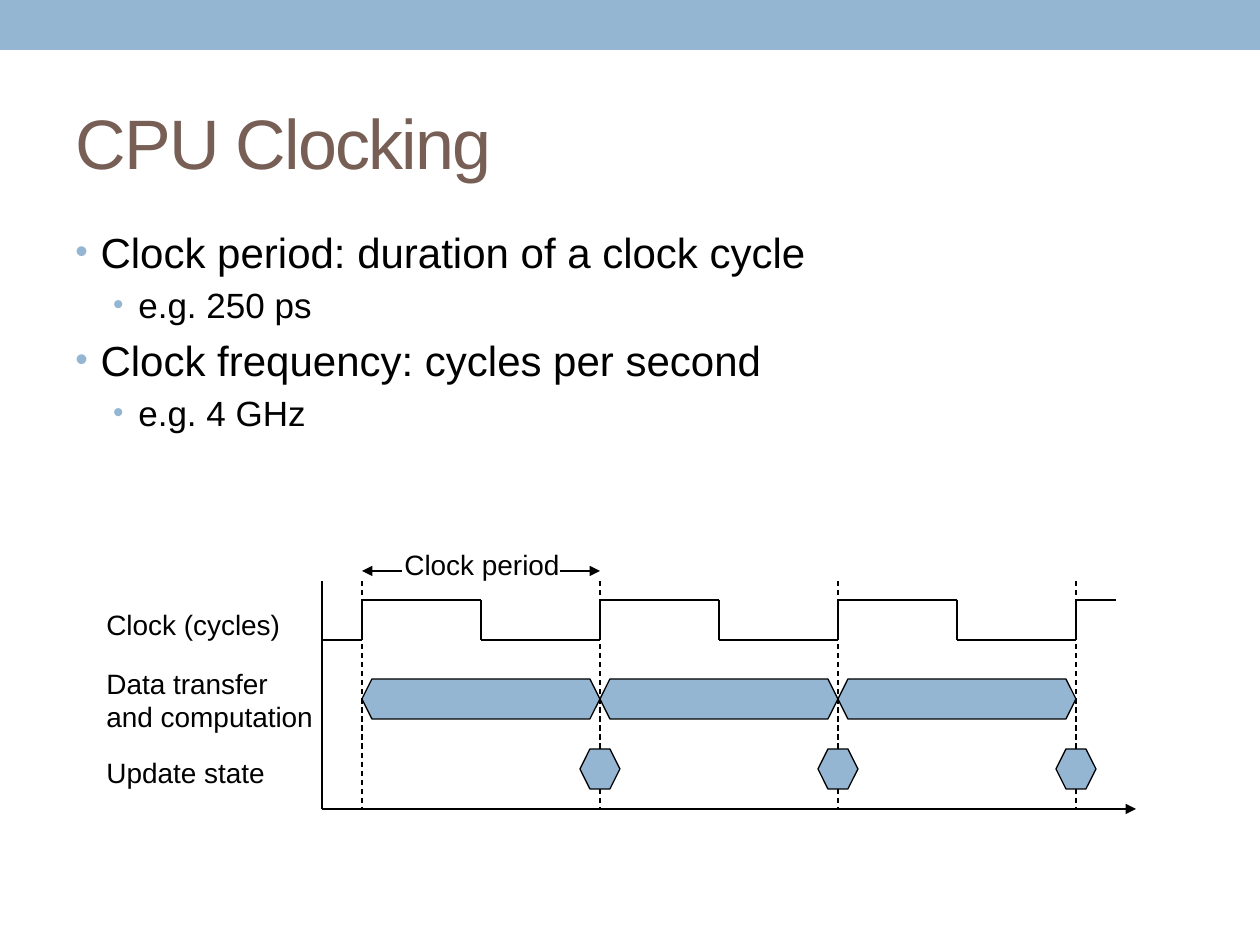
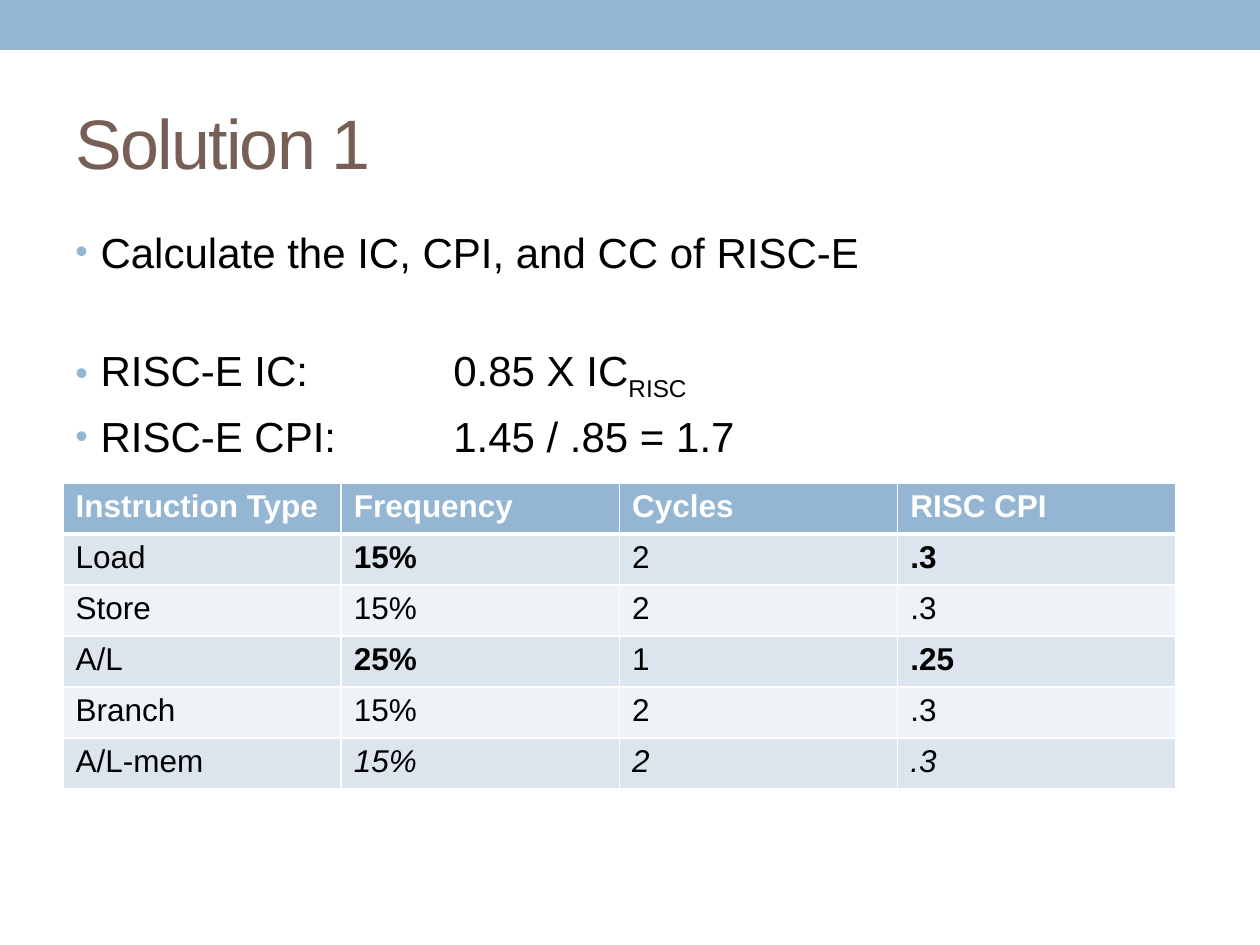
import itertools

import lxml.etree
import pptx
import pptx.dml.color
import pptx.enum.dml
import pptx.enum.shapes
import pptx.enum.text
import pptx.oxml.ns
import pptx.util

SCALE = 914400 / 126
BLUE, BROWN, BLACK, WHITE = "94B6D2", "775F55", "000000", "FFFFFF"
ROW_FILLS = ["DCE5EE", "EEF3F7"]
BAND_BOX = (0, 0, 1260, 50)
TITLE_BOX = (63, 73, 1134, 136)
BODY_BOX = (63, 220, 1134, 672)
ANCHOR = pptx.enum.text.MSO_ANCHOR
ALIGN = pptx.enum.text.PP_ALIGN
SHAPE = pptx.enum.shapes.MSO_SHAPE
LEVELS = [
    {"marL": 182880, "indent": -182880, "defTabSz": 914400, "size": 24},
    {"marL": 457200, "indent": -182880, "defTabSz": 914400, "size": 20},
]


def px(length):
    return pptx.util.Emu(round(length * SCALE))


def rgb(value):
    return pptx.dml.color.RGBColor.from_string(value)


def apply_format(target, values):
    for name, value in values.items():
        setattr(target, name, value)


def add_xml(parent, tag, **attributes):
    return lxml.etree.SubElement(parent, pptx.oxml.ns.qn(tag), attributes)


def format_font(run, size, color=BLACK, **values):
    apply_format(run.font, {"name": "Arial", "size": pptx.util.Pt(size), **values})
    run.font.color.rgb = rgb(color)


def paint(shape, fill, outlined=False):
    shape.shadow.inherit = False
    shape.fill.solid()
    shape.fill.fore_color.rgb = rgb(fill)
    if outlined:
        shape.line.color.rgb = rgb(BLACK)
        shape.line.width = pptx.util.Pt(0.75)
    else:
        shape.line.fill.background()


def add_rectangle(slide, box, fill):
    shape = slide.shapes.add_shape(SHAPE.RECTANGLE, *map(px, box))
    paint(shape, fill)


def add_line(slide, start, end, width=0.75, dashed=False, arrows=()):
    line = slide.shapes.add_connector(
        pptx.enum.shapes.MSO_CONNECTOR.STRAIGHT, *map(px, (*start, *end)))
    line.line.color.rgb = rgb(BLACK)
    line.line.width = pptx.util.Pt(width)
    if dashed:
        line.line.dash_style = pptx.enum.dml.MSO_LINE.DASH
    properties = line._element.spPr
    for arrow in arrows:
        add_xml(properties.find(pptx.oxml.ns.qn("a:ln")), arrow, type="triangle")
    add_xml(properties, "a:effectLst")


def add_text_frame(slide, box, **values):
    frame = slide.shapes.add_textbox(*map(px, box)).text_frame
    apply_format(frame, {"word_wrap": True, **values})
    return frame


def add_label(slide, box, text, alignment=ALIGN.LEFT):
    frame = add_text_frame(slide, box, word_wrap=False,
                           auto_size=pptx.enum.text.MSO_AUTO_SIZE.SHAPE_TO_FIT_TEXT)
    paragraph = frame.paragraphs[0]
    apply_format(paragraph, {"text": text, "alignment": alignment})
    for run in paragraph.runs:
        format_font(run, 16)


def add_hexagon(slide, left, top, width, height=40, notch=10):
    middle, right, bottom = top + height / 2, left + width, top + height
    builder = slide.shapes.build_freeform(left, middle, SCALE)
    builder.add_line_segments([
        (left + notch, top), (right - notch, top), (right, middle),
        (right - notch, bottom), (left + notch, bottom)], close=True)
    paint(builder.convert_to_shape(), BLUE, outlined=True)


def add_title(slide, box, text):
    frame = add_text_frame(slide, box, vertical_anchor=ANCHOR.MIDDLE)
    run = frame.paragraphs[0].add_run()
    run.text = text
    format_font(run, 40, BROWN)
    run._r.get_or_add_rPr().set("spc", "-100")


def add_bullets(slide, box, bullets):
    frame = add_text_frame(slide, box)
    for index, bullet in enumerate(bullets):
        paragraph = frame.add_paragraph() if index else frame.paragraphs[0]
        level = bullet.get("level", 0)
        style = LEVELS[level]
        paragraph.level = level
        properties = paragraph._p.get_or_add_pPr()
        for name in ("marL", "indent", "defTabSz"):
            properties.set(name, str(style[name]))
        if "gap" in bullet:
            paragraph.space_before = pptx.util.Pt(bullet["gap"])
        else:
            add_xml(add_xml(properties, "a:spcBef"), "a:spcPct", val="20000")
        add_xml(add_xml(properties, "a:buClr"), "a:srgbClr", val=BLUE)
        add_xml(properties, "a:buSzPct", val="85000")
        add_xml(properties, "a:buFont", typeface="Arial")
        add_xml(properties, "a:buChar", char="•")
        run = paragraph.add_run()
        run.text = bullet["text"]
        format_font(run, style["size"])
        if "subscript" in bullet:
            run = paragraph.add_run()
            run.text = bullet["subscript"]
            format_font(run, style["size"])
            run._r.get_or_add_rPr().set("baseline", "-25000")


def add_timing_diagram(slide, box):
    left, top, width, height = box
    period, lead, cycles = 238, 40, 3
    axis_left, axis_bottom = left + 228, top + height
    edges = [axis_left + lead + period * cycle for cycle in range(cycles + 1)]
    axis_top, high, low = top + 39, top + 58, top + 98
    bar_top, state_top = top + 137, top + 207

    add_line(slide, (edges[0], top + 29), (edges[1], top + 29),
             arrows=("a:headEnd", "a:tailEnd"))
    for edge in edges:
        add_line(slide, (edge, axis_top), (edge, axis_bottom), dashed=True)

    wave = [(axis_left, low)]
    for edge in edges:
        middle = edge + period / 2
        wave += [(edge, low), (edge, high), (middle, high), (middle, low)]
    wave = wave[:-2] + [(edges[-1] + lead, high)]
    for start, end in itertools.pairwise(wave):
        add_line(slide, start, end, width=1.5)

    for edge in edges[1:]:
        add_hexagon(slide, edge - 20, state_top, 40)
    add_line(slide, (axis_left, axis_bottom), (left + width, axis_bottom),
             arrows=("a:tailEnd",))
    add_line(slide, (axis_left, axis_bottom), (axis_left, axis_top))

    for offset, label_width, label_height, text in [
            (59, 199, 47, "Clock (cycles)"),
            (118, 232, 81, "Data transfer\nand computation"),
            (207, 184, 47, "Update state")]:
        add_label(slide, (left, top + offset, label_width, label_height), text)
    center = (edges[0] + edges[1]) / 2
    add_rectangle(slide, (center - 79, top + 19, 158, 20), WHITE)
    add_label(slide, (center - 89, top - 1, 180, 47), "Clock period", ALIGN.CENTER)
    for edge in edges[:-1]:
        add_hexagon(slide, edge, bar_top, period)


def add_cell_borders(cell, bottom_width):
    properties = cell._tc.get_or_add_tcPr()
    widths = {"a:lnL": 1, "a:lnR": 1, "a:lnT": 1, "a:lnB": bottom_width}
    for position, (tag, width) in enumerate(widths.items()):
        border = add_xml(properties, tag, w=str(pptx.util.Pt(width)))
        add_xml(add_xml(border, "a:solidFill"), "a:srgbClr", val=WHITE)
        properties.insert(position, border)


def add_cpi_table(slide, box, rows, bold_cells, italic_cells):
    left, top, width, height = box
    table = slide.shapes.add_table(
        len(rows), len(rows[0]), *map(px, box)).table
    table.horz_banding = False
    for column in table.columns:
        column.width = px(width / len(rows[0]))
    for row_index, values in enumerate(rows):
        table.rows[row_index].height = px(height / len(rows))
        header = row_index == 0
        fill = BLUE if header else ROW_FILLS[(row_index - 1) % 2]
        for column_index, value in enumerate(values):
            position = (row_index, column_index)
            cell = table.cell(*position)
            cell.fill.solid()
            cell.fill.fore_color.rgb = rgb(fill)
            add_cell_borders(cell, 3 if header else 1)
            run = cell.text_frame.paragraphs[0].add_run()
            run.text = value
            format_font(run, 18, WHITE if header else BLACK,
                        bold=header or position in bold_cells,
                        italic=position in italic_cells)


def add_content_slide(presentation, title, bullets):
    slide = presentation.slides.add_slide(presentation.slide_layouts[6])
    add_rectangle(slide, BAND_BOX, BLUE)
    add_title(slide, TITLE_BOX, title)
    add_bullets(slide, BODY_BOX, bullets)
    return slide


def build_clocking_slide(presentation):
    slide = add_content_slide(presentation, "CPU Clocking", [
        {"text": "Clock period: duration of a clock cycle"},
        {"text": "e.g. 250 ps", "level": 1},
        {"text": "Clock frequency: cycles per second"},
        {"text": "e.g. 4 GHz", "level": 1},
    ])
    add_timing_diagram(slide, (94, 542, 1042, 267))


def build_solution_slide(presentation):
    slide = add_content_slide(presentation, "Solution 1", [
        {"text": "Calculate the IC, CPI, and CC of RISC-E"},
        {"text": "RISC-E IC: \t\t0.85 X IC", "subscript": "RISC", "gap": 39},
        {"text": "RISC-E CPI: \t1.45 / .85 = 1.7"},
    ])
    add_cpi_table(slide, (63, 483, 1113, 306), [
        ["Instruction Type", "Frequency", "Cycles", "RISC CPI"],
        ["Load", "15%", "2", ".3"],
        ["Store", "15%", "2", ".3"],
        ["A/L", "25%", "1", ".25"],
        ["Branch", "15%", "2", ".3"],
        ["A/L-mem", "15%", "2", ".3"],
    ], bold_cells={(1, 1), (1, 3), (3, 1), (3, 3)},
        italic_cells={(5, 1), (5, 2), (5, 3)})


def main():
    presentation = pptx.Presentation()
    apply_format(presentation, {"slide_width": px(1260), "slide_height": px(945)})
    build_clocking_slide(presentation)
    build_solution_slide(presentation)
    presentation.save("out.pptx")


if __name__ == "__main__":
    main()
